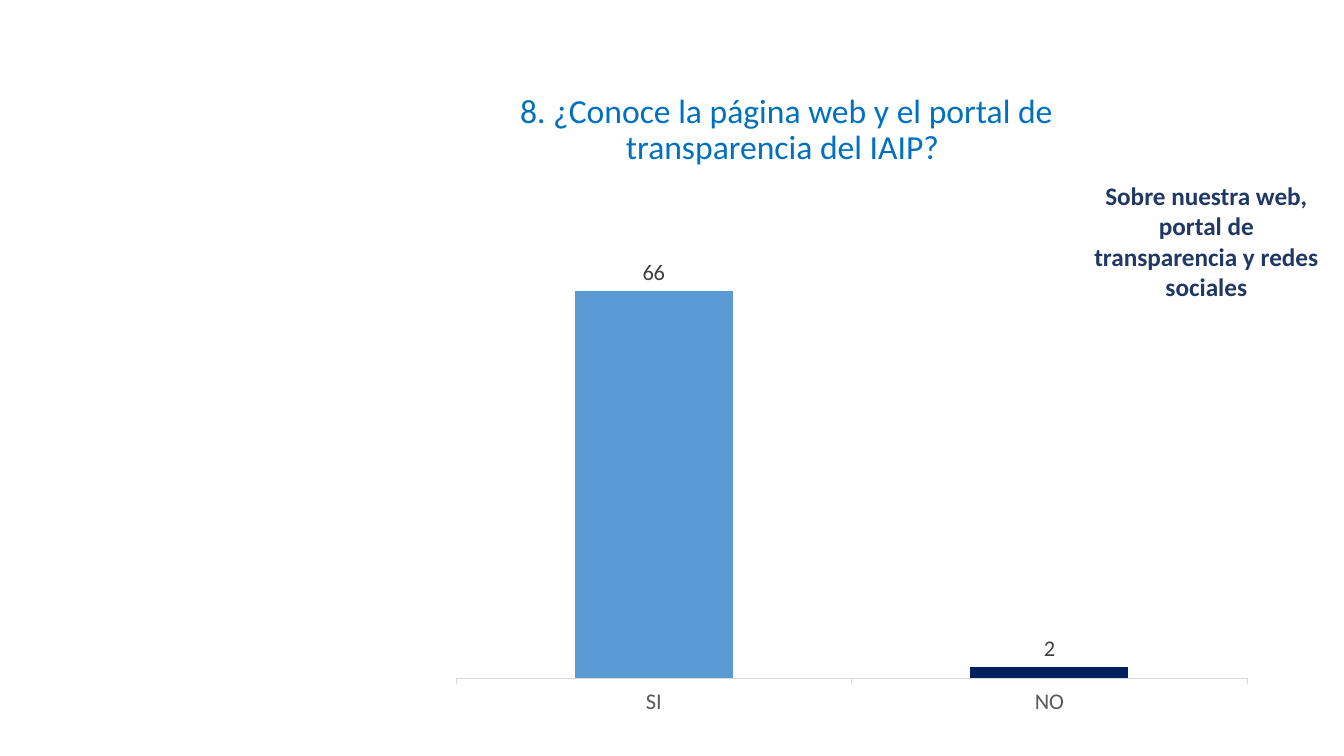
"""Build the survey slide on awareness of the IAIP web page and portal."""
import dataclasses
import typing

import lxml.etree
import pptx
import pptx.chart.data
import pptx.dml.color
import pptx.enum.chart
import pptx.enum.text
import pptx.oxml.ns
import pptx.util

Inches = pptx.util.Inches
Pt = pptx.util.Pt
Box = tuple[float, float, float, float]


@dataclasses.dataclass(frozen=True)
class Theme:
    font: str = "Calibri"
    title: str = "0070C0"
    note: str = "203864"
    axis: str = "595959"
    rule: str = "D9D9D9"
    label: str = "404040"
    yes: str = "5B9BD5"
    no: str = "002060"
    big: int = 24
    mid: int = 18
    small: int = 16


@dataclasses.dataclass(frozen=True)
class Label:
    text: str
    box: Box
    size: int
    color: str
    bold: bool
    space: float
    anchor: pptx.enum.text.MSO_ANCHOR


@dataclasses.dataclass(frozen=True)
class Bar:
    name: str
    value: int
    color: str


THEME = Theme()
ANCHOR = pptx.enum.text.MSO_ANCHOR
LABELS = [
    Label("8. ¿Conoce la página web y el portal de transparencia del IAIP? ",
          (4.43, 0.68, 6.74, 1.23), THEME.big, THEME.title, False, 0.9, ANCHOR.MIDDLE),
    Label("Sobre nuestra web, portal de transparencia y redes sociales",
          (10.71, 1.74, 2.51, 1.31), THEME.mid, THEME.note, True, 1.0, ANCHOR.TOP),
]
BARS = [Bar("SI", 66, THEME.yes), Bar("NO", 2, THEME.no)]
CHART: Box = (3.94, 1.77, 8.7, 5.58)
PLOT = {"x": 0.067, "y": 0.158, "w": 0.902, "h": 0.731}


def apply(item: typing.Any, values: dict[str, typing.Any]) -> None:
    for name, value in values.items():
        setattr(item, name, value)


def style(font: typing.Any, size: int, color: str, bold: bool = False) -> None:
    apply(font, {"name": THEME.font, "size": Pt(size), "bold": bold})
    font.color.rgb = pptx.dml.color.RGBColor.from_string(color)


def paint(fill: typing.Any, color: str) -> None:
    fill.solid()
    fill.fore_color.rgb = pptx.dml.color.RGBColor.from_string(color)


def write(slide: typing.Any, label: Label) -> None:
    frame = slide.shapes.add_textbox(*map(Inches, label.box)).text_frame
    apply(frame, {"word_wrap": True, "vertical_anchor": label.anchor})
    line = frame.paragraphs[0]
    apply(line, {"alignment": pptx.enum.text.PP_ALIGN.CENTER,
                 "line_spacing": label.space})
    run = line.add_run()
    run.text = label.text
    style(run.font, label.size, label.color, label.bold)


def place(chart: typing.Any) -> None:
    qn = pptx.oxml.ns.qn
    area = chart._chartSpace.find(".//" + qn("c:plotArea"))
    for old in area.findall(qn("c:layout")):
        area.remove(old)
    frame = lxml.etree.Element(qn("c:layout"))
    area.insert(0, frame)
    manual = lxml.etree.SubElement(frame, qn("c:manualLayout"))
    modes = {"layoutTarget": "inner", "xMode": "edge", "yMode": "edge"}
    for name, value in {**modes, **PLOT}.items():
        lxml.etree.SubElement(manual, qn("c:" + name)).set("val", str(value))


def graph(slide: typing.Any, bars: list[Bar]) -> None:
    kinds = pptx.enum.chart
    data = pptx.chart.data.CategoryChartData()
    data.categories = [bar.name for bar in bars]
    data.add_series("Series 1", [bar.value for bar in bars])
    chart = slide.shapes.add_chart(
        kinds.XL_CHART_TYPE.COLUMN_CLUSTERED, *map(Inches, CHART), data).chart
    apply(chart, {"has_title": False, "has_legend": False})
    style(chart.font, THEME.small, "000000")
    apply(chart.value_axis, {"visible": False, "has_major_gridlines": False,
                             "minimum_scale": 0, "maximum_scale": 70})
    axis = chart.category_axis
    apply(axis, {"major_tick_mark": kinds.XL_TICK_MARK.OUTSIDE,
                 "minor_tick_mark": kinds.XL_TICK_MARK.NONE})
    style(axis.tick_labels.font, THEME.small, THEME.axis)
    axis.format.line.width = Pt(0.75)
    paint(axis.format.line.fill, THEME.rule)
    plot = chart.plots[0]
    apply(plot, {"gap_width": 150, "vary_by_categories": False})
    row = plot.series[0]
    paint(row.format.fill, THEME.yes)
    for spot, bar in enumerate(bars):
        paint(row.points[spot].format.fill, bar.color)
    apply(row.data_labels, {"show_value": True,
                            "position": kinds.XL_LABEL_POSITION.OUTSIDE_END})
    style(row.data_labels.font, THEME.small, THEME.label)
    place(chart)


def main() -> None:
    deck = pptx.Presentation()
    apply(deck, {"slide_width": Inches(13.33), "slide_height": Inches(7.5)})
    slide = deck.slides.add_slide(deck.slide_layouts[6])
    for label in LABELS:
        write(slide, label)
    graph(slide, BARS)
    deck.save("out.pptx")


if __name__ == "__main__":
    main()
